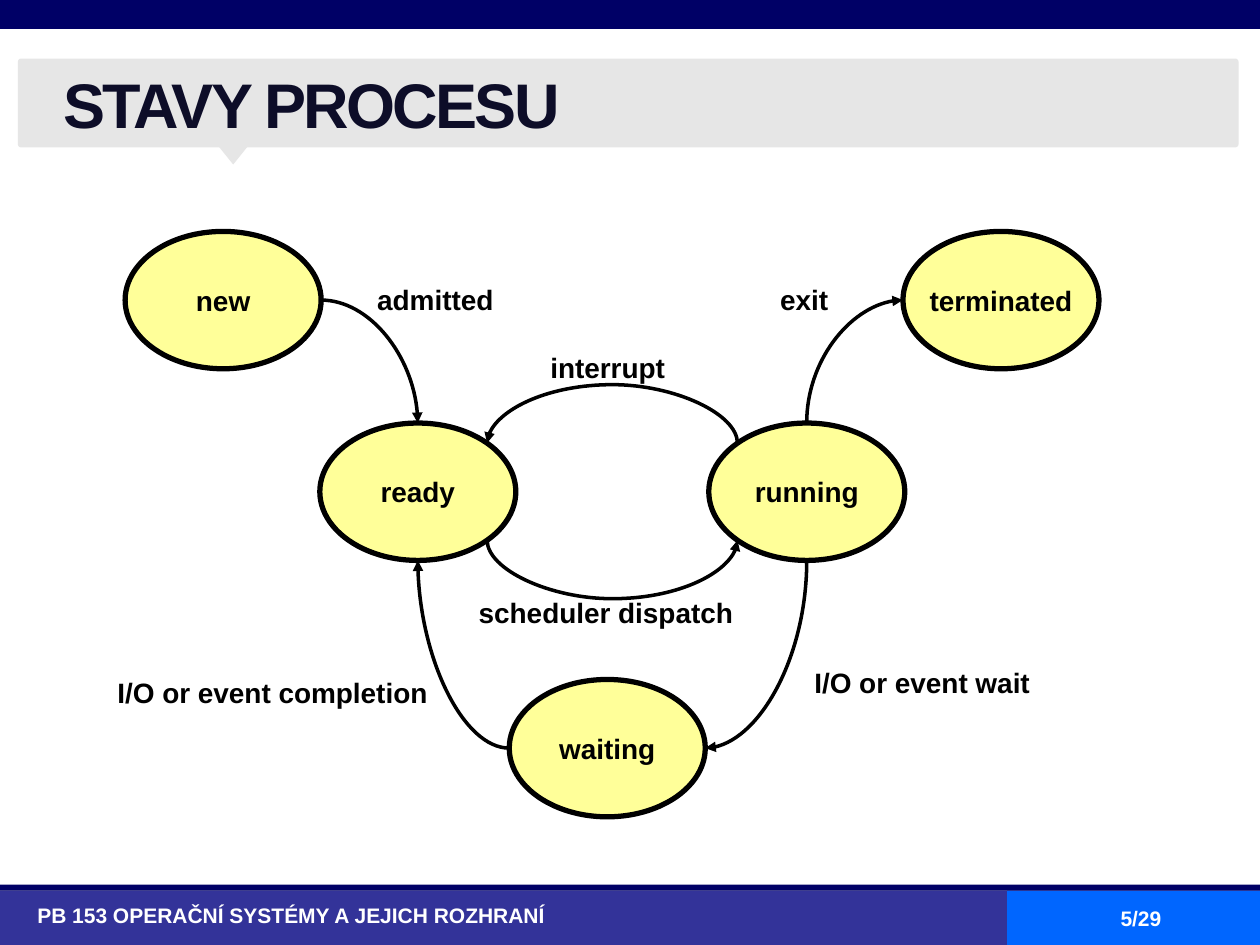
from dataclasses import dataclass
from math import cos, radians, sin
from typing import NamedTuple

from lxml import etree
from pptx import Presentation
from pptx.dml.color import RGBColor
from pptx.enum import shapes as kinds, text as txt
from pptx.oxml.ns import qn
from pptx.util import Pt

GEO = kinds.MSO_SHAPE
LEFT, MID = txt.PP_ALIGN.LEFT, txt.PP_ALIGN.CENTER


@dataclass(frozen=True)
class Theme:
    font: str = "Arial"
    navy: str = "000066"
    indigo: str = "333399"
    blue: str = "0066FF"
    grey: str = "E6E6E6"
    cream: str = "FFFF99"
    black: str = "000000"
    white: str = "FFFFFF"
    ink: str = "0D0D28"
    head: int = 36
    body: int = 16
    foot: int = 12


class Box(NamedTuple):
    x: float
    y: float
    w: float
    h: float


class Band(NamedTuple):
    geo: int
    box: Box
    color: str


class State(NamedTuple):
    name: str
    x: float
    y: float


class Link(NamedTuple):
    """A curve between two ellipse sites (0 top, then counterclockwise to 7)."""
    start: str
    out: int
    end: str
    into: int
    turn: int = 0
    flip: str = ""
    bow: float = 0


class Label(NamedTuple):
    text: str
    box: Box


T = Theme()
SIZE = (112, 78.5)
THIN = 0.1

BANDS = [
    Band(GEO.RECTANGLE, Box(0, 0, 720, 16.5), T.navy),
    Band(GEO.RECTANGLE, Box(0, 509, 720, 31), T.indigo),
    Band(GEO.RECTANGLE, Box(575.5, 509, 144.5, 31), T.blue),
    Band(GEO.RECTANGLE, Box(0, 505.5, 720, 3.5), T.navy),
    Band(GEO.ROUNDED_RECTANGLE, Box(10.25, 33.5, 697.5, 50.75), T.grey),
    Band(GEO.ISOSCELES_TRIANGLE, Box(124, 82.5, 18.5, 11.5), T.grey),
]
STATES = [
    State("new", 71.5, 132.25),
    State("terminated", 516, 132.25),
    State("ready", 182.75, 241.75),
    State("running", 405, 241.75),
    State("waiting", 291, 388.25),
]
LINKS = [
    Link("new", 6, "ready", 0),
    Link("running", 1, "ready", 7, 270, "V", 29.5),
    Link("running", 0, "terminated", 2, 90, "HV"),
    Link("running", 4, "waiting", 6, 90),
    Link("ready", 5, "running", 3, 270, "H", 29.5),
    Link("waiting", 2, "ready", 4, 180),
]
LABELS = [
    Label("admitted", Box(206.75, 157.75, 84, 26.5)),
    Label("interrupt", Box(302.25, 197, 90, 26.5)),
    Label("exit", Box(431.5, 157.75, 56, 26.5)),
    Label("I/O or event completion", Box(54.5, 382.5, 202.5, 26.5)),
    Label("I/O or event wait", Box(442.75, 377, 168.5, 26.5)),
    Label("scheduler dispatch", Box(262, 337, 168.5, 26.5)),
]


def place(shape, box: Box) -> None:
    for key, val in zip(("left", "top", "width", "height"), box):
        setattr(shape, key, Pt(val))


def write(shape, words: str, size: int, color: str, align=MID, inset: bool = True,
          **opts) -> None:
    frame = shape.text_frame
    frame.text = words
    for key, val in {"word_wrap": True, **opts}.items():
        setattr(frame, key, val)
    if not inset:
        for side in ("left", "top", "right", "bottom"):
            setattr(frame, f"margin_{side}", 0)
    para = frame.paragraphs[0]
    para.alignment = align
    font = para.runs[0].font
    for key, val in {"name": T.font, "size": Pt(size), "bold": True}.items():
        setattr(font, key, val)
    font.color.rgb = RGBColor.from_string(color)


def fill(shape, color: str) -> None:
    shape.shadow.inherit = False
    shape.fill.solid()
    shape.fill.fore_color.rgb = RGBColor.from_string(color)


def stroke(shape, width: float) -> None:
    shape.line.width = Pt(width)
    shape.line.color.rgb = RGBColor.from_string(T.black)


def add_band(slide, band: Band) -> None:
    shape = slide.shapes.add_shape(band.geo, *map(Pt, band.box))
    fill(shape, band.color)
    shape.line.fill.background()
    if band.geo == GEO.ROUNDED_RECTANGLE:
        shape.adjustments[0] = 0.035
    if band.geo == GEO.ISOSCELES_TRIANGLE:
        shape.rotation = 180


def add_text(slide, label: Label, size: int, color: str, **opts) -> None:
    write(slide.shapes.add_textbox(*map(Pt, label.box)), label.text, size, color, **opts)


def add_state(slide, state: State):
    shape = slide.shapes.add_shape(GEO.OVAL, *map(Pt, (state.x, state.y, *SIZE)))
    fill(shape, T.cream)
    stroke(shape, 3)
    write(shape, state.name, T.body, T.black, word_wrap=False,
          vertical_anchor=txt.MSO_ANCHOR.MIDDLE)
    return shape


def site(state: State, num: int) -> tuple[float, float]:
    turn, (wide, high) = radians(90 + 45 * num), SIZE
    return (state.x + wide / 2 * (1 + cos(turn)), state.y + high / 2 * (1 - sin(turn)))


def add_link(slide, link: Link, states: dict, ovals: dict) -> None:
    (x1, y1), (x2, y2) = site(states[link.start], link.out), site(states[link.end], link.into)
    wide, high = abs(x2 - x1), abs(y2 - y1)
    if link.turn % 180:
        wide, high = high, wide
    if link.bow:
        wide = THIN
    line = slide.shapes.add_connector(kinds.MSO_CONNECTOR.CURVE, 0, 0, 0, 0)
    place(line, Box((x1 + x2 - wide) / 2, (y1 + y2 - high) / 2, wide, high))
    stroke(line, 2)
    props = line._element.spPr
    frame = props.find(qn("a:xfrm"))
    frame.set("rot", str(link.turn * 60000))
    for axis in link.flip:
        frame.set(f"flip{axis}", "1")
    geom = props.find(qn("a:prstGeom"))
    if link.bow:
        guides = geom.find(qn("a:avLst"))
        etree.SubElement(guides, qn("a:gd"), name="adj1",
                         fmla=f"val {round(link.bow / THIN * 100000)}")
    else:
        geom.set("prst", "curvedConnector2")
    etree.SubElement(line.line._get_or_add_ln(), qn("a:tailEnd"),
                     type="triangle", w="med", len="med")
    etree.SubElement(props, qn("a:effectLst"))
    # begin_connect knows four sites only; an ellipse has eight
    joins = line._element.find(qn("p:nvCxnSpPr")).find(qn("p:cNvCxnSpPr"))
    for tag, name, num in (("a:stCxn", link.start, link.out), ("a:endCxn", link.end, link.into)):
        etree.SubElement(joins, qn(tag), id=str(ovals[name].shape_id), idx=str(num))


def add_title(slide, words: str) -> None:
    title = slide.shapes.title
    place(title, Box(36, 21.5, 669.5, 78.5))
    write(title, words, T.head, T.ink, LEFT, False, vertical_anchor=txt.MSO_ANCHOR.MIDDLE,
          auto_size=txt.MSO_AUTO_SIZE.NONE)
    para = title.text_frame.paragraphs[0]
    para.line_spacing = Pt(40)
    para.runs[0].font._element.set("spc", "-150")
    slide.shapes._spTree.append(title._element)  # in front of the grey band


def main() -> None:
    deck = Presentation()
    deck.slide_width, deck.slide_height = Pt(720), Pt(540)
    slide = deck.slides.add_slide(deck.slide_layouts[5])
    for band in BANDS:
        add_band(slide, band)
    add_title(slide, "STAVY PROCESU")
    add_text(slide, Label("5/29", Box(587, 517.5, 130, 14.5)), T.foot, T.white, inset=False)
    add_text(slide, Label("PB 153 OPERAČNÍ SYSTÉMY A JEJICH ROZHRANÍ",
                          Box(14.25, 512, 561.5, 28)), T.foot, T.white, align=LEFT)
    states = {state.name: state for state in STATES}
    ovals = {name: add_state(slide, state) for name, state in states.items()}
    for link in LINKS:
        add_link(slide, link, states, ovals)
    for label in LABELS:
        add_text(slide, label, T.body, T.black)
    deck.save("out.pptx")


if __name__ == "__main__":
    main()
